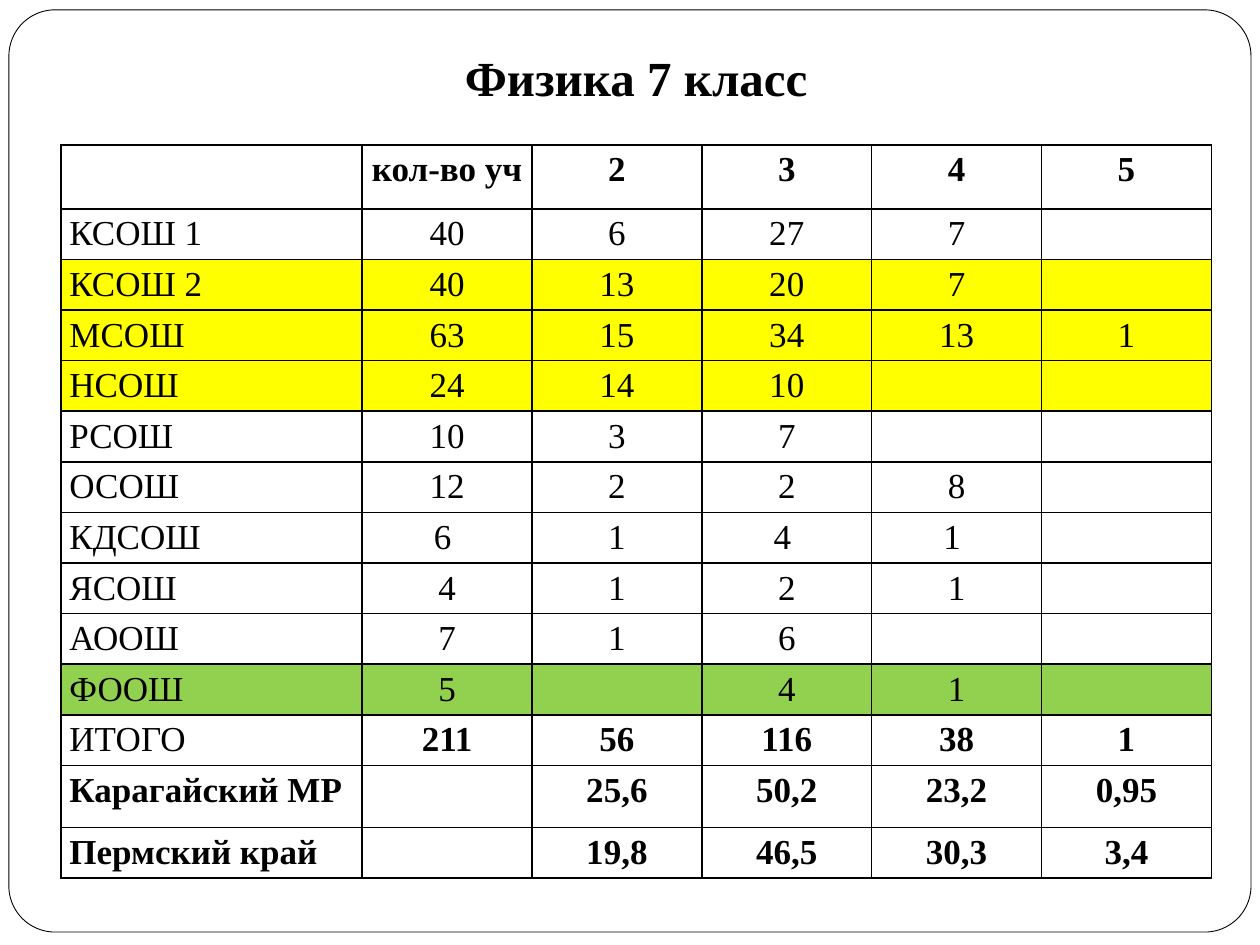
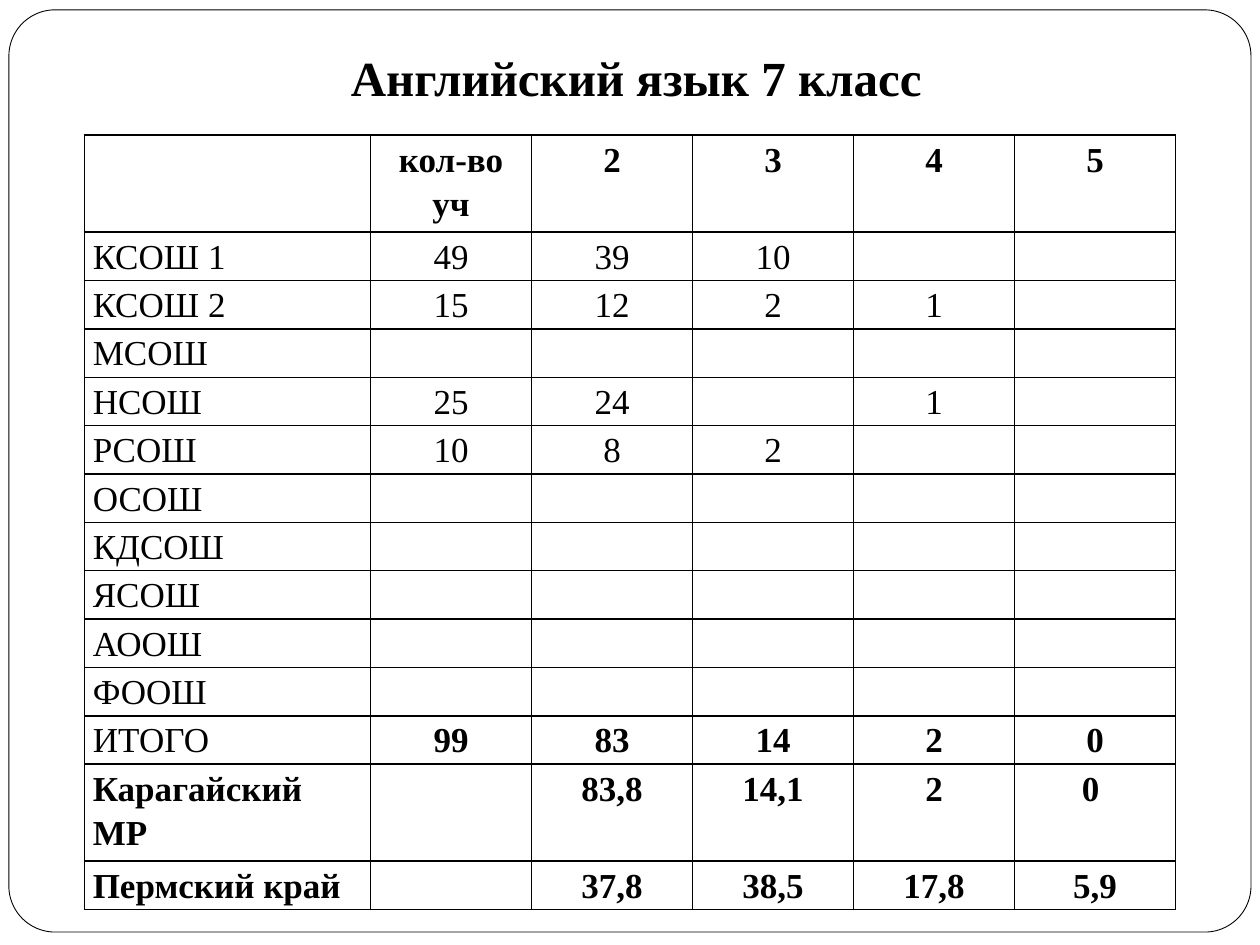
from lxml.etree import SubElement
from pptx import Presentation
from pptx.dml.color import RGBColor
from pptx.enum.shapes import MSO_SHAPE as Shape
from pptx.enum.text import MSO_AUTO_SIZE as AutoSize, PP_ALIGN as Align
from pptx.oxml.ns import qn
from pptx.util import Cm, Pt

COLORS = {"ink": "000000", "paper": "FFFFFF", "yellow": "FFFF00", "green": "92D050"}
FONT = "Times New Roman"
HEADER = ["", "кол-во уч", "2", "3", "4", "5"]
TOTAL_ROW, DISTRICT_ROW = 11, 12

# Boxes in cm: left, top, width, height
FRAME_BOX = (0.18, 0.2, 25.04, 18.59)
TITLE_BOX = (3.02, 0.84, 19.61, 1.45)

PHYSICS = [
    ["КСОШ 1", "40", "6", "27", "7", ""],
    ["КСОШ 2", "40", "13", "20", "7", ""],
    ["МСОШ", "63", "15", "34", "13", "1"],
    ["НСОШ", "24", "14", "10", "", ""],
    ["РСОШ", "10", "3", "7", "", ""],
    ["ОСОШ", "12", "2", "2", "8", ""],
    ["КДСОШ", "6 ", "1", "4 ", "1 ", ""],
    ["ЯСОШ", "4", "1", "2", "1", ""],
    ["АООШ", "7", "1", "6", "", ""],
    ["ФООШ", "5", "", "4", "1", ""],
    ["ИТОГО", "211", "56", "116", "38", "1"],
    ["Карагайский МР", "", "25,6", "50,2", "23,2", "0,95"],
    ["Пермский край", "", "19,8", "46,5", "30,3", "3,4"],
]
ENGLISH = [
    ["КСОШ 1", "49", "39", "10", "", ""],
    ["КСОШ 2", "15", "12", "2", "1", ""],
    ["МСОШ", "", "", "", "", ""],
    ["НСОШ", "25", "24", "", "1", ""],
    ["РСОШ", "10", "8", "2", "", ""],
    ["ОСОШ", "", "", "", "", ""],
    ["КДСОШ", "", "", "", "", ""],
    ["ЯСОШ", "", "", "", "", ""],
    ["АООШ", "", "", "", "", ""],
    ["ФООШ", "", "", "", "", ""],
    ["ИТОГО", "99", "83", "14", "2", "0"],
    ["Карагайский МР", "", "83,8", "14,1", "2", "0 "],
    ["Пермский край", "", "37,8", "38,5", "17,8", "5,9"],
]


def color(name):
    return RGBColor.from_string(COLORS[name])


def format_paragraph(paragraph, size, bold, align):
    paragraph.alignment = align
    for run in paragraph.runs:
        run.font.name = FONT
        run.font.size = Pt(size)
        run.font.bold = bold
        run.font.color.rgb = color("ink")


def add_frame(slide, box):
    frame = slide.shapes.add_shape(Shape.ROUNDED_RECTANGLE, *map(Cm, box))
    frame.adjustments[0] = 0.05
    frame.shadow.inherit = False
    frame.fill.solid()
    frame.fill.fore_color.rgb = color("paper")
    frame.line.color.rgb = color("ink")
    frame.line.width = Pt(0.5)


def add_title(slide, box, text):
    text_frame = slide.shapes.add_textbox(*map(Cm, box)).text_frame
    text_frame.word_wrap = True
    text_frame.auto_size = AutoSize.SHAPE_TO_FIT_TEXT
    text_frame.text = text
    format_paragraph(text_frame.paragraphs[0], 28, True, Align.CENTER)


def add_borders(cell):
    properties = cell._tc.get_or_add_tcPr()
    for side in ("a:lnL", "a:lnR", "a:lnT", "a:lnB"):
        line = SubElement(properties, qn(side), w=str(Pt(1)))
        fill = SubElement(line, qn("a:solidFill"))
        SubElement(fill, qn("a:srgbClr"), val=COLORS["ink"])


def fill_cell(cell, text, bold, align, fill):
    cell.margin_left = cell.margin_right = Cm(0.17)
    cell.margin_top = cell.margin_bottom = 0
    cell.text = text
    paragraph = cell.text_frame.paragraphs[0]
    paragraph.line_spacing = 1.15
    format_paragraph(paragraph, 20, bold, align)
    # Borders come before the fill in the cell properties
    add_borders(cell)
    if fill:
        cell.fill.solid()
        cell.fill.fore_color.rgb = color(fill)
    else:
        cell.fill.background()


def add_results(slide, box, results, label_width, header_height, district_height,
                row_height, highlights):
    """Marks by school; the column and row sizes are in cm."""
    rows = [HEADER] + results
    table = slide.shapes.add_table(len(rows), len(HEADER), *map(Cm, box)).table
    table.first_row = table.horz_banding = False

    # Column widths and row heights
    mark_width = (box[2] - label_width) / (len(HEADER) - 1)
    for index, column in enumerate(table.columns):
        column.width = Cm(mark_width if index else label_width)
    special_heights = {0: header_height, DISTRICT_ROW: district_height}
    for index, row in enumerate(table.rows):
        row.height = Cm(special_heights.get(index, row_height))

    # Cells
    for row_index, values in enumerate(rows):
        for column_index, value in enumerate(values):
            bold = (row_index == 0 or row_index >= DISTRICT_ROW
                    or row_index == TOTAL_ROW and column_index > 0)
            align = Align.CENTER if column_index else Align.LEFT
            fill_cell(table.cell(row_index, column_index), value, bold, align,
                      highlights.get(values[0]))


def add_subject_slide(presentation, title, **table_options):
    slide = presentation.slides.add_slide(presentation.slide_layouts[6])
    add_frame(slide, FRAME_BOX)
    add_title(slide, TITLE_BOX, title)
    add_results(slide, **table_options)


def main():
    presentation = Presentation()
    presentation.slide_width, presentation.slide_height = Cm(25.4), Cm(19.05)
    add_subject_slide(
        presentation, "Физика 7 класс", results=PHYSICS,
        box=(1.23, 2.92, 23.19, 14.8), label_width=6.07,
        header_height=1.29, district_height=1.25, row_height=1.02,
        highlights={"КСОШ 2": "yellow", "МСОШ": "yellow", "НСОШ": "yellow",
                    "ФООШ": "green"})
    add_subject_slide(
        presentation, "Английский язык 7 класс", results=ENGLISH,
        box=(1.7, 2.72, 22, 15.57), label_width=5.77,
        header_height=1.96, district_height=1.95, row_height=0.97,
        highlights={})
    presentation.save("out.pptx")


if __name__ == "__main__":
    main()
